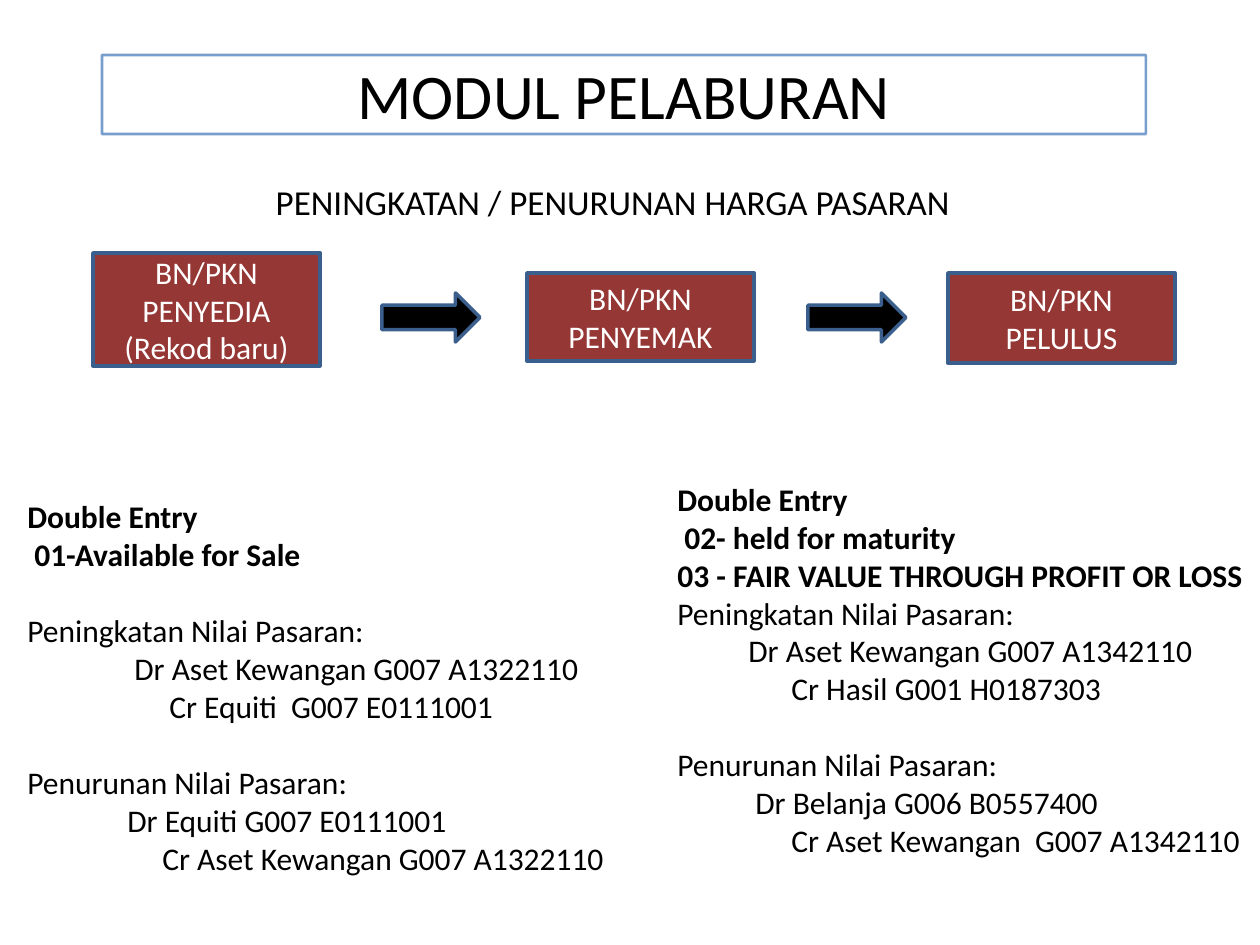
from lxml import etree
from pptx import Presentation
from pptx.dml.color import RGBColor
from pptx.enum.shapes import MSO_SHAPE
from pptx.enum.text import MSO_ANCHOR, PP_ALIGN
from pptx.oxml.ns import qn
from pptx.util import Pt

RECT, ARROW = MSO_SHAPE.RECTANGLE, MSO_SHAPE.RIGHT_ARROW
CENTER, LEFT = PP_ALIGN.CENTER, PP_ALIGN.LEFT
PX = 914400 / 126
COLORS = {"black": "000000", "white": "FFFFFF", "step": "953735",
          "outline": "3A5F8C", "title": "4F81BD"}


def add_box(kind, box, fill, line, width):
    s = slide.shapes.add_shape(kind, *(round(v * PX) for v in box))
    s.shadow.inherit = False
    if fill:
        s.fill.solid()
        s.fill.fore_color.rgb = RGBColor.from_string(COLORS[fill])
    else:
        s.fill.background()
    s.line.color.rgb = RGBColor.from_string(COLORS[line])
    s.line.width = Pt(width)
    s.text_frame.vertical_anchor = MSO_ANCHOR.MIDDLE
    return s


def write(tf, lines, size, color, align=CENTER):
    """Fill a frame with (text, indent in px, bold, points before) lines."""
    tf.word_wrap = True
    for i, (text, indent, bold, before) in enumerate(lines):
        p = tf.add_paragraph() if i else tf.paragraphs[0]
        p.text = text
        p.alignment = align
        p.space_before = Pt(before)
        if indent:
            p._p.get_or_add_pPr().set("marL", str(round(indent * PX)))
        font = p.runs[0].font
        font.name, font.size, font.bold = "Calibri", Pt(size), bold
        font.color.rgb = RGBColor.from_string(COLORS[color])


prs = Presentation()
prs.slide_width, prs.slide_height = round(1260 * PX), round(945 * PX)
slide = prs.slides.add_slide(prs.slide_layouts[6])

# Process steps and the arrows between them
for left in (382, 808):
    add_box(ARROW, (left, 293, 98, 49), "black", "outline", 2)

steps = [
    (93, 253, 113, ["BN/PKN PENYEDIA", "(Rekod baru)"]),
    (527, 273, 88, ["BN/PKN PENYEMAK"]),
    (948, 273, 90, ["BN/PKN PELULUS"]),
]
for left, top, height, lines in steps:
    s = add_box(RECT, (left, top, 227, height), "step", "outline", 2)
    write(s.text_frame, [(t, 0, False, 0) for t in lines], 18, "white")

# Title with a slightly transparent outline
title = add_box(RECT, (102, 55, 1044, 79), None, "title", 1.5)
write(title.text_frame, [("MODUL PELABURAN", 0, False, 0)], 36.3, "black")
color = title.line._ln.find(".//" + qn("a:srgbClr"))
etree.SubElement(color, qn("a:alpha")).set("val", "76000")

# Subtitle and the two journal entry lists
GAP = 22
texts = [
    ((253, 174, 720, 55), 20, CENTER,
     [("PENINGKATAN / PENURUNAN HARGA PASARAN", 0, False, 0)]),
    ((15, 491, 630, 394), 18, LEFT, [
        ("Double Entry", 0, True, 0),
        ("01-Available for Sale", 7, True, 0),
        ("Peningkatan Nilai Pasaran:", 0, False, GAP),
        ("Dr Aset Kewangan G007 A1322110", 107, False, 0),
        ("Cr Equiti  G007 E0111001", 142, False, 0),
        ("Penurunan Nilai Pasaran:", 0, False, GAP),
        ("Dr Equiti G007 E0111001", 100, False, 0),
        ("Cr Aset Kewangan G007 A1322110", 135, False, 0),
    ]),
    ((665, 474, 630, 394), 18, LEFT, [
        ("Double Entry", 0, True, 0),
        ("02- held for maturity", 7, True, 0),
        ("03 - FAIR VALUE THROUGH PROFIT OR LOSS", 0, True, 0),
        ("Peningkatan Nilai Pasaran:", 0, False, 0),
        ("Dr Aset Kewangan G007 A1342110", 71, False, 0),
        ("Cr Hasil G001 H0187303", 114, False, 0),
        ("Penurunan Nilai Pasaran:", 0, False, GAP),
        ("Dr Belanja G006 B0557400", 78, False, 0),
        ("Cr Aset Kewangan  G007 A1342110", 114, False, 0),
    ]),
]
for box, size, align, lines in texts:
    s = slide.shapes.add_textbox(*(round(v * PX) for v in box))
    write(s.text_frame, lines, size, "black", align)

prs.save("out.pptx")
